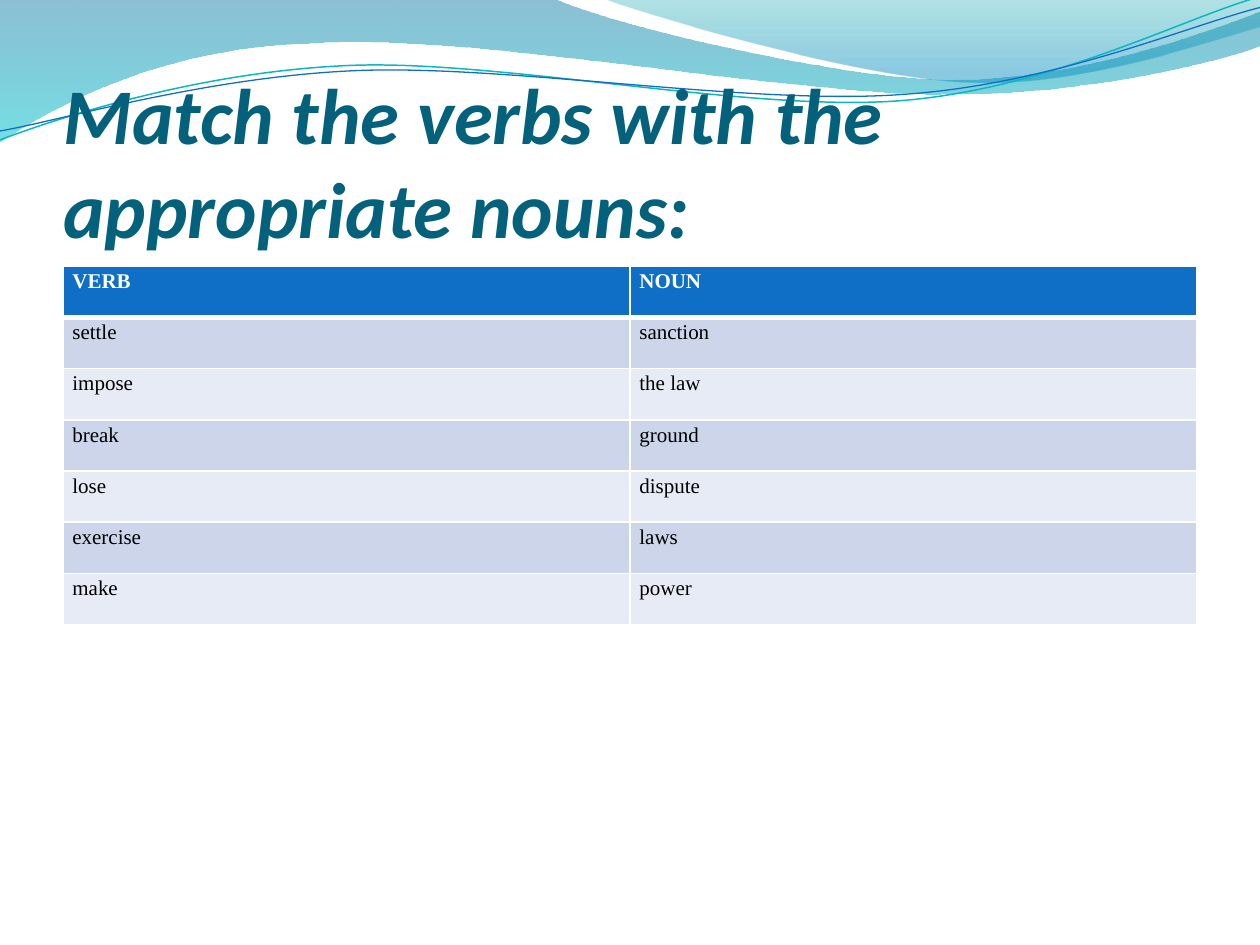
"""Build a vocabulary slide that matches verbs with nouns."""
import dataclasses

import lxml.etree
import pptx
import pptx.dml.color
import pptx.enum.text
import pptx.oxml.ns
import pptx.util

Pt = pptx.util.Pt
RGB = pptx.dml.color.RGBColor.from_string
qn = pptx.oxml.ns.qn


@dataclasses.dataclass(frozen=True)
class Theme:
    """Colours, fonts and type sizes of the slide."""
    title: str = "04617B"
    header: str = "0F6FC6"
    teal: str = "0AB8BF"
    white: str = "FFFFFF"
    ink: str = "000000"
    bands: tuple = ("CCD5EA", "E7EBF5")
    wide_wave: tuple = ((0, "0074A1", 45), (1, "00C6CF", 55))
    short_wave: tuple = ((0, "00A1A9", 30), (0.8, "008BBF", 45))
    title_font: str = "Calibri"
    table_font: str = "Times New Roman"
    title_size: float = 45
    table_size: float = 12


THEME = Theme()
LINE_TILT = 357.3

WIDE_WAVE = [
    (0, 0), (316.8, -0.7), (342.7, 12.2, 478.1, 45.4, 545.8, 45.4),
    (614.2, 45.4, 689.8, 18.7, 720, 6.5), (720.7, 25.9),
    (707.8, 31.7, 626.4, 54.7, 537.1, 54), (447.8, 54, 275, 20.2, 185, 24.5),
    (92.9, 25.9, 33.1, 59.8, -0.7, 81.4),
]
SHORT_WAVE = [
    (344.9, -0.7), (366.5, 7.9, 491, 44.6, 553.7, 46.8),
    (616.3, 49.7, 691.9, 23, 720, 15.1), (720, 0),
]
TEAL_LINE = [
    (-1.4, 63), (33.7, 51.6, 114, 29.5, 199.8, 29.9),
    (284.8, 30.3, 425.8, 67.2, 512.4, 64.9), (599, 62.4, 676.4, 25.7, 720.2, 15.5),
]
BLUE_LINE = [
    (-1.2, 57.9), (33, 53.7, 118.3, 32.5, 204, 33),
    (290.5, 33.5, 428.9, 63.8, 515.5, 61.3), (601.4, 59.6, 678.5, 30.1, 721.4, 21.3),
]
PAIRS = [
    ("VERB", "NOUN"), ("settle", "sanction"), ("impose", "the law"),
    ("break", "ground"), ("lose", "dispute"), ("exercise", "laws"),
    ("make", "power"),
]


def set_all(obj, **values):
    """Set each named attribute of an object."""
    for name, value in values.items():
        setattr(obj, name, value)


def write(p, text, **font):
    """Add a run with the given font values to a paragraph."""
    r = p.add_run()
    r.text = text
    r.font.color.rgb = RGB(font.pop("color"))
    set_all(r.font, **font)


def add_path(s, box, path, close):
    """Draw an outline of straight and cubic segments offset by its box corner."""
    points = [
        (Pt(box[0] + seg[i]), Pt(box[1] + seg[i + 1]))
        for seg in path for i in range(0, len(seg), 2)
    ]
    builder = s.shapes.build_freeform(*points[0])
    builder.add_line_segments(points[1:], close=close)
    sp = builder.convert_to_shape()
    sp.shadow.inherit = False
    nodes = iter(list(sp.element.spPr.iter(qn("a:lnTo"))))
    for seg in path[1:]:
        first = next(nodes)
        if len(seg) == 6:
            first.tag = qn("a:cubicBezTo")
            for _ in range(2):
                node = next(nodes)
                first.append(node[0])
                node.getparent().remove(node)
    return sp


def add_waves(s, box):
    """Draw the gradient waves and the two thin lines over them."""
    for path, stops in ((WIDE_WAVE, THEME.wide_wave), (SHORT_WAVE, THEME.short_wave)):
        sp = add_path(s, box, path, True)
        sp.line.fill.background()
        sp.fill.gradient()
        sp.fill.gradient_angle = 270
        for stop, (position, color, _) in zip(sp.fill.gradient_stops, stops):
            stop.position = position
            stop.color.rgb = RGB(color)
        colors = sp.element.spPr.iter(qn("a:srgbClr"))
        for node, (_, _, opacity) in zip(colors, stops):
            lxml.etree.SubElement(node, qn("a:alpha"), val=str(opacity * 1000))
    for path, color, width in ((TEAL_LINE, THEME.teal, 0.85), (BLUE_LINE, THEME.header, 0.75)):
        sp = add_path(s, box, path, False)
        sp.rotation = LINE_TILT
        sp.fill.background()
        sp.line.color.rgb = RGB(color)
        sp.line.width = Pt(width)


def add_title(s, box, text):
    """Place the slide title at the bottom of its box."""
    tf = s.shapes.add_textbox(*map(Pt, box)).text_frame
    set_all(tf, word_wrap=True, vertical_anchor=pptx.enum.text.MSO_ANCHOR.BOTTOM,
            margin_left=0, margin_top=Pt(3.6), margin_right=0, margin_bottom=0)
    write(tf.paragraphs[0], text, name=THEME.title_font, size=Pt(THEME.title_size),
          color=THEME.title, bold=True, italic=True)


def add_borders(cell, top, bottom):
    """Give a cell white borders with chosen top and bottom widths."""
    tc_pr = cell._tc.get_or_add_tcPr()
    for side, width in (("L", 1), ("R", 1), ("T", top), ("B", bottom)):
        ln = lxml.etree.SubElement(tc_pr, qn(f"a:ln{side}"), w=str(Pt(width)))
        fill = lxml.etree.SubElement(ln, qn("a:solidFill"))
        lxml.etree.SubElement(fill, qn("a:srgbClr"), val=THEME.white)


def add_pairs_table(s, box, rows):
    """Fill the box with a header row and banded rows of word pairs."""
    table = s.shapes.add_table(len(rows), len(rows[0]), *map(Pt, box)).table
    for row in table.rows:
        row.height = Pt(box[3] / len(rows))
    for i, words in enumerate(rows):
        head = i == 0
        for j, word in enumerate(words):
            cell = table.cell(i, j)
            set_all(cell, margin_left=Pt(5.4), margin_right=Pt(5.4),
                    margin_top=0, margin_bottom=0)
            add_borders(cell, 3 if i == 1 else 1, 3 if head else 1)
            cell.fill.solid()
            cell.fill.fore_color.rgb = RGB(THEME.header if head else THEME.bands[(i - 1) % 2])
            p = cell.text_frame.paragraphs[0]
            p.line_spacing = 1.15
            write(p, word, name=THEME.table_font, size=Pt(THEME.table_size), bold=head,
                  color=THEME.white if head else THEME.ink)


def main():
    """Build and save the slide."""
    prs = pptx.Presentation()
    set_all(prs, slide_width=Pt(720), slide_height=Pt(540))
    s = prs.slides.add_slide(prs.slide_layouts[6])
    add_waves(s, (0, 0))
    add_title(s, (36.25, 55.5, 648, 90), "Match the verbs with the appropriate nouns:")
    add_pairs_table(s, (36, 152.25, 648, 204.6), PAIRS)
    prs.save("out.pptx")


if __name__ == "__main__":
    main()
